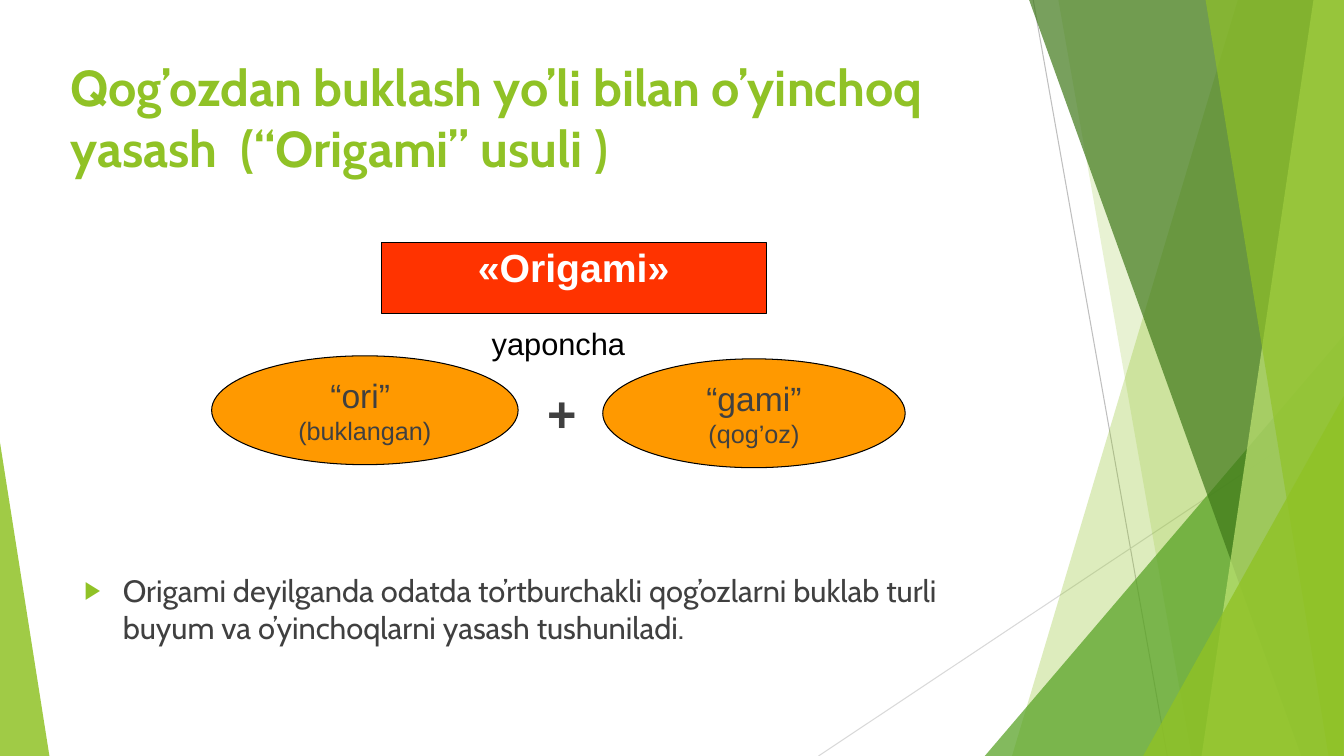
from lxml.etree import SubElement
from pptx import Presentation
from pptx.dml.color import RGBColor
from pptx.enum.shapes import MSO_CONNECTOR, MSO_SHAPE
from pptx.enum.text import MSO_ANCHOR, PP_ALIGN
from pptx.oxml.ns import qn
from pptx.util import Inches, Pt

GREEN = RGBColor(0x90, 0xC2, 0x26)
LEAF = RGBColor(0x54, 0xA0, 0x21)
FOREST = RGBColor(0x3F, 0x78, 0x19)
LIME = RGBColor(0xC0, 0xE4, 0x74)
RED = RGBColor(0xFF, 0x33, 0x00)
ORANGE = RGBColor(0xFF, 0x99, 0x00)
CHARCOAL = RGBColor(0x40, 0x40, 0x40)
BLACK = RGBColor(0, 0, 0)
WHITE = RGBColor(0xFF, 0xFF, 0xFF)
GREY = RGBColor(0xBF, 0xBF, 0xBF)
PALE_GREY = RGBColor(0xD9, 0xD9, 0xD9)

CELL = Inches(0.1)
COLUMNS, ROWS = 133.33, 75

TITLE = "Qog’ozdan buklash yo’li bilan o’yinchoq yasash  (“Origami” usuli )"
DEFINITION = ("Origami deyilganda odatda to’rtburchakli qog’ozlarni buklab turli "
              "buyum va o’yinchoqlarni yasash tushuniladi.")

# (start, end, colour) in cells
RAYS = [((102.5, 0), (115.8, ROWS), GREY), ((COLUMNS, 40.3), (81.2, ROWS), PALE_GREY)]

# ("band", top column, bottom column) or ("wedge", left, top, width, apex)
FACETS = [
    (("band", 122.8, 100.4), GREEN, 30),
    (("band", 105, 118.2), GREEN, 20),
    (("wedge", 97.7, 33.3, 35.6, 1), LEAF, 72),
    (("band", 102.1, 129.1), FOREST, 70),
    (("band", 130.3, 119.2), LIME, 70),
    (("band", 119.6, 131.8), GREEN, 65),
    (("wedge", 113.4, 39.3, 19.9, 1), GREEN, 80),
    (("wedge", 0, 43.9, 4.9, 0), GREEN, 85),
]

# (box in cells, text, size, font, colour, bold, wrap)
CAPTIONS = [
    ((6, 5.1, 94, 14.4), TITLE, 36, "Cabin", GREEN, True, True),
    ((7.4, 56.2, 94, 12.4), DEFINITION, 22, "Cabin", CHARCOAL, False, True),
    ((47.8, 31.7, 15.3, 4.7), "yaponcha", 22, "Arial", BLACK, False, False),
    ((53.3, 37.4, 4.9, 7), "+", 36, "Arial", CHARCOAL, True, False),
]

# (shape, box in cells, fill, anchor, lines of (text, size, colour, bold))
WORD_PARTS = [
    (MSO_SHAPE.RECTANGLE, (37.8, 24.1, 38.2, 7), RED, MSO_ANCHOR.TOP,
     [("«Origami»", 28, WHITE, True)]),
    (MSO_SHAPE.OVAL, (21, 35.3, 30.4, 10.8), ORANGE, MSO_ANCHOR.MIDDLE,
     [("“ori” ", 24, CHARCOAL, False), ("(buklangan)", 18, CHARCOAL, False)]),
    (MSO_SHAPE.OVAL, (59.8, 35.6, 30, 10.8), ORANGE, MSO_ANCHOR.MIDDLE,
     [("“gami”", 24, CHARCOAL, False), ("(qog’oz)", 18, CHARCOAL, False)]),
]


def cells(*lengths):
    return [round(length * CELL) for length in lengths]


def set_font(paragraph, size, name, colour, bold):
    paragraph.font.size = Pt(size)
    paragraph.font.name = name
    paragraph.font.color.rgb = colour
    paragraph.font.bold = bold


def add_ray(slide, start, end, colour):
    ray = slide.shapes.add_connector(MSO_CONNECTOR.STRAIGHT, *cells(*start, *end))
    ray.line.color.rgb = colour
    ray.line.width = Pt(0.75)
    SubElement(ray._element.spPr, qn("a:effectLst"))


def add_facet(slide, outline, colour, opacity):
    kind, *lengths = outline
    if kind == "band":
        top, bottom = lengths
        builder = slide.shapes.build_freeform(*cells(top, 0), scale=1.0)
        corners = [(COLUMNS, 0), (COLUMNS, ROWS), (bottom, ROWS)]
        builder.add_line_segments([cells(*corner) for corner in corners], close=True)
        facet = builder.convert_to_shape()
    else:
        left, top, width, apex = lengths
        facet = slide.shapes.add_shape(
            MSO_SHAPE.ISOSCELES_TRIANGLE, *cells(left, top, width, ROWS - top))
        facet.adjustments[0] = apex
    facet.shadow.inherit = False
    facet.fill.solid()
    facet.fill.fore_color.rgb = colour
    facet.line.fill.background()
    swatch = facet._element.spPr.find(qn("a:solidFill"))[0]
    SubElement(swatch, qn("a:alpha"), val=str(opacity * 1000))


def add_caption(slide, box, text, size, font, colour, bold, wrap):
    caption = slide.shapes.add_textbox(*cells(*box))
    caption.text_frame.word_wrap = wrap
    paragraph = caption.text_frame.paragraphs[0]
    paragraph.text = text
    set_font(paragraph, size, font, colour, bold)
    return paragraph


def add_bullet(paragraph):
    properties = paragraph._p.get_or_add_pPr()
    properties.set("marL", str(Inches(0.38)))
    properties.set("indent", str(-Inches(0.38)))
    tint = SubElement(properties, qn("a:buClr"))
    SubElement(tint, qn("a:srgbClr"), val=str(GREEN))
    SubElement(properties, qn("a:buSzPct"), val="80000")
    SubElement(properties, qn("a:buFont"), typeface="Arial")
    SubElement(properties, qn("a:buChar"), char="▶")


def add_word_part(slide, outline, box, fill, anchor, lines):
    part = slide.shapes.add_shape(outline, *cells(*box))
    part.shadow.inherit = False
    part.fill.solid()
    part.fill.fore_color.rgb = fill
    part.line.color.rgb = BLACK
    part.line.width = Pt(0.75)
    frame = part.text_frame
    frame.word_wrap = False
    frame.vertical_anchor = anchor
    frame.margin_top = frame.margin_bottom = 0
    frame.text = "\n".join(text for text, *_ in lines)
    for paragraph, (_, size, colour, bold) in zip(frame.paragraphs, lines):
        paragraph.alignment = PP_ALIGN.CENTER
        set_font(paragraph, size, "Arial", colour, bold)


def main():
    """Build the origami slide."""
    deck = Presentation()
    deck.slide_width, deck.slide_height = cells(COLUMNS, ROWS)
    slide = deck.slides.add_slide(deck.slide_layouts[6])
    for ray in RAYS:
        add_ray(slide, *ray)
    for facet in FACETS:
        add_facet(slide, *facet)
    for word_part in WORD_PARTS:
        add_word_part(slide, *word_part)
    for caption in CAPTIONS:
        paragraph = add_caption(slide, *caption)
        if paragraph.text == DEFINITION:
            add_bullet(paragraph)
    deck.save("out.pptx")


if __name__ == "__main__":
    main()
